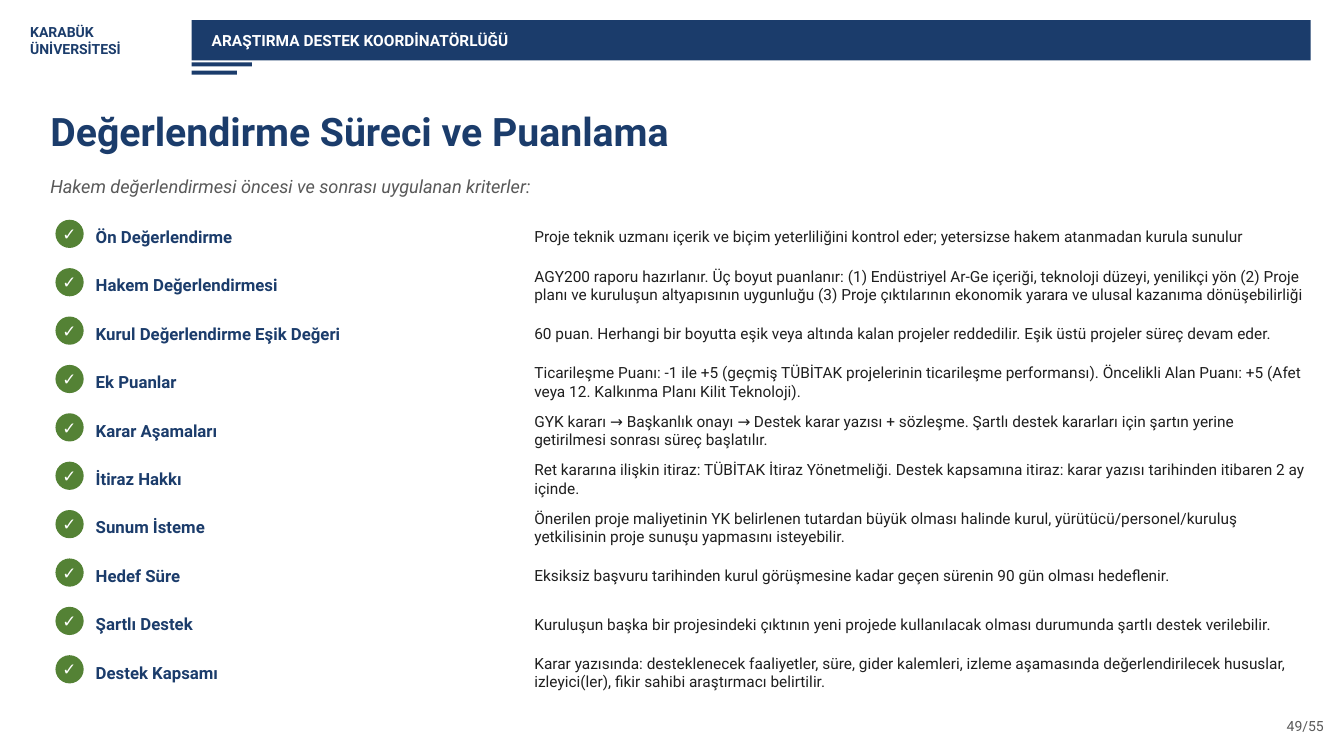
from pptx import Presentation
from pptx.dml.color import RGBColor
from pptx.enum.shapes import MSO_SHAPE as Shape
from pptx.enum.text import MSO_ANCHOR as Anchor, PP_ALIGN as Align
from pptx.util import Inches, Pt

NAVY = RGBColor(0x1B, 0x3C, 0x6B)
GREEN = RGBColor(0x54, 0x82, 0x35)
GREY = RGBColor(0x59, 0x59, 0x59)
INK = RGBColor(0x1F, 0x1F, 0x1F)
WHITE = RGBColor(0xFF, 0xFF, 0xFF)

FONT = "Roboto"
ROW_PITCH = 0.48
ROW_HEIGHT = 0.4

CRITERIA = [
    ("Ön Değerlendirme",
     "Proje teknik uzmanı içerik ve biçim yeterliliğini kontrol eder; yetersizse hakem "
     "atanmadan kurula sunulur"),
    ("Hakem Değerlendirmesi",
     "AGY200 raporu hazırlanır. Üç boyut puanlanır: (1) Endüstriyel Ar-Ge içeriği, teknoloji "
     "düzeyi, yenilikçi yön (2) Proje planı ve kuruluşun altyapısının uygunluğu (3) Proje "
     "çıktılarının ekonomik yarara ve ulusal kazanıma dönüşebilirliği"),
    ("Kurul Değerlendirme Eşik Değeri",
     "60 puan. Herhangi bir boyutta eşik veya altında kalan projeler reddedilir. Eşik üstü "
     "projeler süreç devam eder."),
    ("Ek Puanlar",
     "Ticarileşme Puanı: -1 ile +5 (geçmiş TÜBİTAK projelerinin ticarileşme performansı). "
     "Öncelikli Alan Puanı: +5 (Afet veya 12. Kalkınma Planı Kilit Teknoloji)."),
    ("Karar Aşamaları",
     "GYK kararı → Başkanlık onayı → Destek karar yazısı + sözleşme. Şartlı destek kararları "
     "için şartın yerine getirilmesi sonrası süreç başlatılır."),
    ("İtiraz Hakkı",
     "Ret kararına ilişkin itiraz: TÜBİTAK İtiraz Yönetmeliği. Destek kapsamına itiraz: karar "
     "yazısı tarihinden itibaren 2 ay içinde."),
    ("Sunum İsteme",
     "Önerilen proje maliyetinin YK belirlenen tutardan büyük olması halinde kurul, "
     "yürütücü/personel/kuruluş yetkilisinin proje sunuşu yapmasını isteyebilir."),
    ("Hedef Süre",
     "Eksiksiz başvuru tarihinden kurul görüşmesine kadar geçen sürenin 90 gün olması "
     "hedeflenir."),
    ("Şartlı Destek",
     "Kuruluşun başka bir projesindeki çıktının yeni projede kullanılacak olması durumunda "
     "şartlı destek verilebilir."),
    ("Destek Kapsamı",
     "Karar yazısında: desteklenecek faaliyetler, süre, gider kalemleri, izleme aşamasında "
     "değerlendirilecek hususlar, izleyici(ler), fikir sahibi araştırmacı belirtilir."),
]


def write(holder, text, size=11, color=INK, bold=False, italic=False,
          align=Align.LEFT, indent=0, wrap=True):
    frame = holder.text_frame
    frame.word_wrap = wrap
    frame.vertical_anchor = Anchor.MIDDLE
    frame.margin_left = Inches(indent)
    frame.margin_top = frame.margin_right = frame.margin_bottom = 0
    frame.text = text
    for paragraph in frame.paragraphs:
        paragraph.alignment = align
        font = paragraph.font
        font.name, font.size = FONT, Pt(size)
        font.bold, font.italic = bold, italic
        font.color.rgb = color


def label(slide, left, top, width, height, text, **style):
    box = slide.shapes.add_textbox(Inches(left), Inches(top), Inches(width), Inches(height))
    write(box, text, **style)


def block(slide, outline, left, top, width, height, color):
    shape = slide.shapes.add_shape(
        outline, Inches(left), Inches(top), Inches(width), Inches(height))
    shape.shadow.inherit = False
    shape.fill.solid()
    shape.fill.fore_color.rgb = color
    shape.line.fill.background()
    return shape


def header(slide, left, top, width):
    label(slide, left, top, 1.5, 0.5, "KARABÜK\nÜNİVERSİTESİ", size=10, color=NAVY, bold=True)
    bar_left = left + 1.6
    bar = block(slide, Shape.RECTANGLE, bar_left, top + 0.05, width - 1.6, 0.4, NAVY)
    write(bar, "ARAŞTIRMA DESTEK KOORDİNATÖRLÜĞÜ", color=WHITE, bold=True, indent=0.2)
    for drop, length in ((0.47, 0.6), (0.55, 0.45)):
        block(slide, Shape.RECTANGLE, bar_left, top + drop, length, 0.04, NAVY)


def heading(slide, left, top, width):
    label(slide, left, top, width, 0.7, "Değerlendirme Süreci ve Puanlama",
          size=28, color=NAVY, bold=True)
    label(slide, left, top + 0.7, width, 0.4,
          "Hakem değerlendirmesi öncesi ve sonrası uygulanan kriterler:",
          size=13, color=GREY, italic=True)


def criteria_list(slide, left, top, width):
    for index, (name, detail) in enumerate(CRITERIA):
        row_top = top + index * ROW_PITCH
        tick = block(slide, Shape.OVAL, left, row_top + 0.03, 0.28, 0.28, GREEN)
        write(tick, "✓", size=12, color=WHITE, bold=True, align=Align.CENTER, wrap=False)
        label(slide, left + 0.4, row_top, 4.3, ROW_HEIGHT, name, size=12, color=NAVY, bold=True)
        label(slide, left + 4.75, row_top, width - 4.75, ROW_HEIGHT, detail)


def page_number(slide, left, top, width):
    label(slide, left, top, width, 0.3, "49/55", size=10, color=GREY, align=Align.RIGHT)


def main():
    deck = Presentation()
    deck.slide_width, deck.slide_height = Inches(13.33), Inches(7.5)
    slide = deck.slides.add_slide(deck.slide_layouts[6])
    header(slide, 0.3, 0.15, 12.7)
    page_number(slide, 12.13, 7.05, 1)
    heading(slide, 0.5, 0.95, 12.3)
    criteria_list(slide, 0.55, 2.15, 12.45)
    deck.save("out.pptx")


if __name__ == "__main__":
    main()
